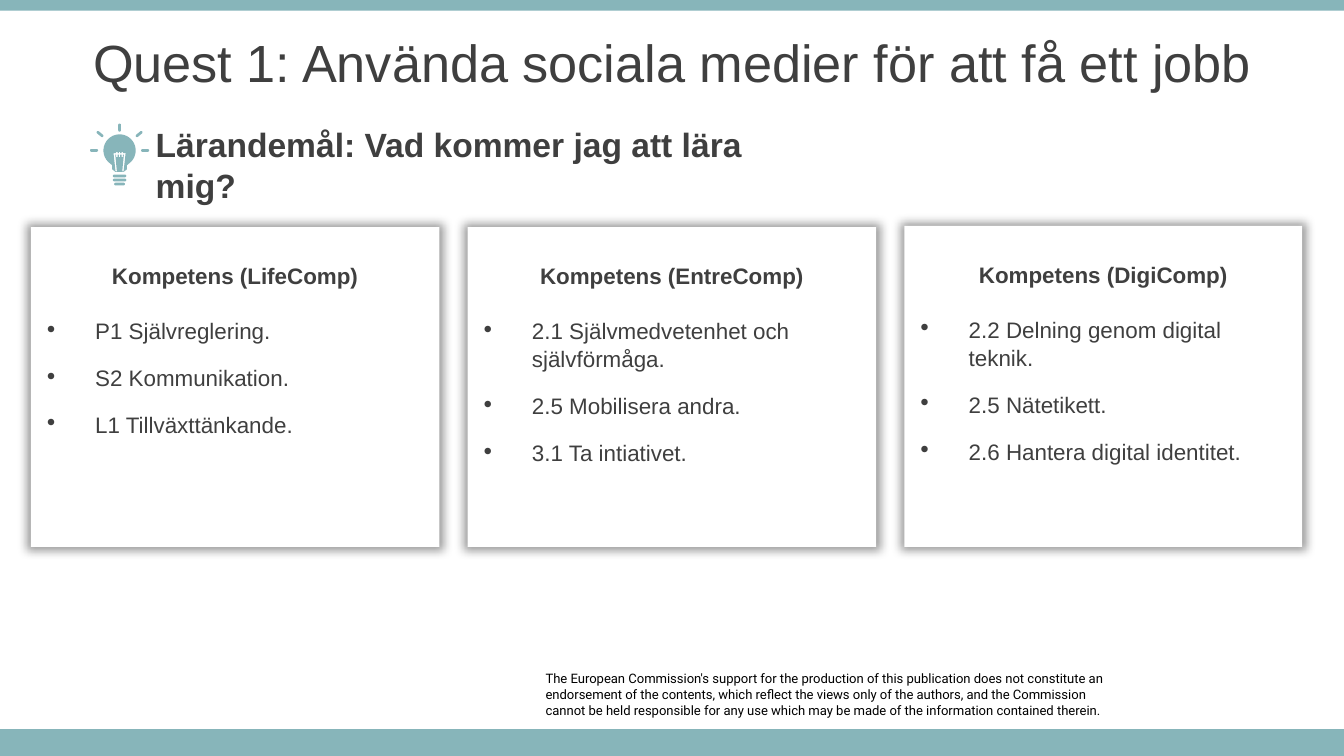
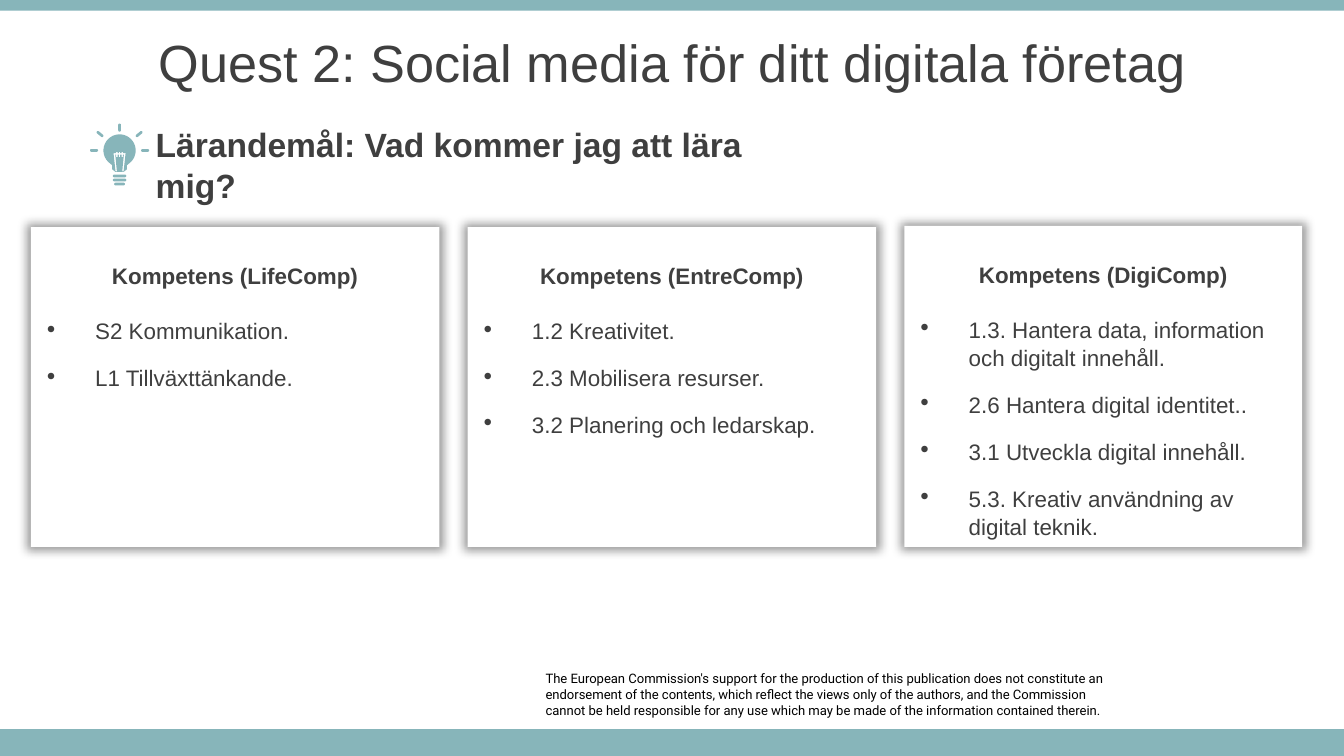
from math import cos, radians, sin

from lxml import etree
from pptx import Presentation
from pptx.dml.color import RGBColor
from pptx.enum.shapes import MSO_SHAPE
from pptx.enum.text import MSO_ANCHOR, MSO_AUTO_SIZE, PP_ALIGN
from pptx.oxml.ns import qn
from pptx.util import Inches, Pt

RECTANGLE = MSO_SHAPE.RECTANGLE
TOP, MIDDLE = MSO_ANCHOR.TOP, MSO_ANCHOR.MIDDLE
LEFT, CENTER = PP_ALIGN.LEFT, PP_ALIGN.CENTER
NO_AUTOFIT = MSO_AUTO_SIZE.NONE

COLOURS = {"band": "87B5BA", "text": "3F3F3F", "card": "FFFFFF", "footer": "000000"}
FONT, FOOTER_FONT = "Arial", "Roboto"
TITLE_ONLY = 5

# The page is a grid of square cells, 100 columns wide and 56.25 rows high.
COLUMNS, ROWS = 100, 56.25
CELL = Inches(10) / COLUMNS

CARD_LINE = 14.5
CARD_PLACES = [(2.3, 16.9, 30.4, 23.8), (34.8, 16.9, 30.4, 23.8), (67.3, 16.8, 29.6, 23.9)]
CARD_HEADINGS = ["Kompetens (LifeComp)", "Kompetens (EntreComp)", "Kompetens (DigiComp)"]
SUBTITLE = "Lärandemål: Vad kommer jag att lära mig?"
FOOTER = [
    "The European Commission's support for the production of this publication does not "
    "constitute an endorsement of the contents, which reflect the views only of the "
    "authors, and the Commission",
    "cannot be held responsible for any use which may be made of the information "
    "contained therein.",
]
QUESTS = [
    ("Quest 1: Använda sociala medier för att få ett jobb", [
        ["P1 Självreglering.", "S2 Kommunikation.", "L1 Tillväxttänkande."],
        ["2.1 Självmedvetenhet och självförmåga.", "2.5 Mobilisera andra.",
         "3.1 Ta intiativet."],
        ["2.2 Delning genom digital teknik.", "2.5 Nätetikett.",
         "2.6 Hantera digital identitet."],
    ]),
    ("Quest 2: Social media för ditt digitala företag", [
        ["S2 Kommunikation.", "L1 Tillväxttänkande."],
        ["1.2 Kreativitet.", "2.3 Mobilisera resurser.", "3.2 Planering och ledarskap."],
        ["1.3. Hantera data, information och digitalt innehåll.",
         "2.6 Hantera digital identitet..", "3.1 Utveckla digital innehåll.",
         "5.3. Kreativ användning av digital teknik."],
    ]),
]


def cells(*lengths):
    return [round(length * CELL) for length in lengths]


def arc(x, y, radius, start, end, step=10):
    return [(x + radius * cos(radians(angle)), y + radius * sin(radians(angle)))
            for angle in range(start, end + 1, step)]


def bar(x, y, angle, length, thickness=0.2):
    """Outline of a round-ended bar that starts at x, y."""
    radius = thickness / 2
    run = length - thickness
    dx, dy = cos(radians(angle)), sin(radians(angle))
    near = arc(x + radius * dx, y + radius * dy, radius, angle + 90, angle + 270, 30)
    far = arc(x + (radius + run) * dx, y + (radius + run) * dy, radius,
              angle - 90, angle + 90, 30)
    return near + far


def bulb_outlines(x, y):
    """Outlines of a lamp whose glass is centred on x, y."""
    glass = arc(x, y, 1.2, 135, 405)
    neck = [(x + 0.55, y + 1.1), (x + 0.55, y + 1.4), (x + 0.3, y + 1.6),
            (x - 0.3, y + 1.6), (x - 0.55, y + 1.4), (x - 0.55, y + 1.1)]
    # Filament: two legs, with three wire loops between them
    filament = [(x - 0.3, y + 1.55), (x - 0.45, y + 0.2)]
    for loop in (-0.2, 0, 0.2):
        filament += [(x + loop - 0.05, y + 0.2), (x + loop - 0.05, y + 0.1),
                     (x + loop + 0.05, y + 0.1), (x + loop + 0.05, y + 0.2)]
    filament += [(x + 0.45, y + 0.2), (x + 0.3, y + 1.55), (x + 0.2, y + 1.55),
                 (x + 0.32, y + 0.3)]
    for loop in (0.2, 0, -0.2):
        filament += [(x + loop + 0.05, y + 0.3), (x + loop + 0.05, y + 0.5),
                     (x + loop - 0.05, y + 0.5), (x + loop - 0.05, y + 0.3)]
    filament += [(x - 0.32, y + 0.3), (x - 0.2, y + 1.55)]
    # Screw base and rays
    base = [bar(x - width / 2, y + drop, 0, width)
            for width, drop in ((1, 1.9), (1, 2.2), (0.8, 2.5))]
    rays = [bar(x + reach * cos(radians(angle)), y + reach * sin(radians(angle)), angle, 0.6)
            for angle, reach in ((180, 1.6), (220, 1.6), (270, 1.4), (320, 1.6), (360, 1.6))]
    return [glass + neck, filament, *base, *rays]


class QuestDeck:
    """Holds the shared style and the page being drawn."""

    def __init__(self):
        self.deck = Presentation()
        self.deck.slide_width, self.deck.slide_height = cells(COLUMNS, ROWS)
        self.page = None

    def colour(self, name):
        return RGBColor.from_string(COLOURS[name])

    def new_page(self):
        self.page = self.deck.slides.add_slide(self.deck.slide_layouts[TITLE_ONLY])

    def style(self, para, size, bold=False, font=FONT, colour="text", align=LEFT):
        para.alignment = align
        for span in para.runs:
            span.font.name = font
            span.font.size = Pt(size)
            span.font.bold = bold
            span.font.color.rgb = self.colour(colour)

    def frame(self, box, anchor, insets=(1, 0.5, 1, 0.5)):
        frame = box.text_frame
        frame.word_wrap = True
        frame.auto_size = NO_AUTOFIT
        frame.vertical_anchor = anchor
        (frame.margin_left, frame.margin_top,
         frame.margin_right, frame.margin_bottom) = cells(*insets)
        return frame

    def paint(self, shape, colour):
        shape.shadow.inherit = False
        shape.fill.solid()
        shape.fill.fore_color.rgb = self.colour(colour)
        shape.line.fill.background()

    def rectangle(self, place, colour):
        shape = self.page.shapes.add_shape(RECTANGLE, *cells(*place))
        self.paint(shape, colour)
        return shape

    def title(self, text):
        box = self.page.shapes.title
        box.left, box.top, box.width, box.height = cells(0, 1.4, COLUMNS, 6.3)
        frame = self.frame(box, MIDDLE)
        frame.text = text
        self.style(frame.paragraphs[0], 28, align=CENTER)

    def text(self, place, lines, size, anchor=TOP, insets=(1, 0.5, 1, 0.5), **look):
        box = self.page.shapes.add_textbox(*cells(*place))
        frame = self.frame(box, anchor, insets)
        frame.text = "\n".join(lines)
        for para in frame.paragraphs:
            self.style(para, size, **look)

    def bulb(self, x, y):
        outlines = [[cells(*point) for point in outline] for outline in bulb_outlines(x, y)]
        builder = self.page.shapes.build_freeform(*outlines[0][0], scale=1.0)
        builder.add_line_segments(outlines[0][1:], close=True)
        for outline in outlines[1:]:
            builder.move_to(*outline[0])
            builder.add_line_segments(outline[1:], close=True)
        self.paint(builder.convert_to_shape(), "band")

    def soft_shadow(self, shape):
        effects = shape._element.spPr.find(qn("a:effectLst"))
        shadow = etree.SubElement(effects, qn("a:outerShdw"), blurRad=str(Pt(5)),
                                  sx="102000", sy="102000", algn="ctr", rotWithShape="0")
        black = etree.SubElement(shadow, qn("a:srgbClr"), val="000000")
        etree.SubElement(black, qn("a:alpha"), val="40000")

    def bullet(self, para):
        indent = Inches(0.38)
        properties = para._p.get_or_add_pPr()
        properties.set("marL", str(indent))
        properties.set("indent", str(-indent))
        tint = etree.SubElement(properties, qn("a:buClr"))
        etree.SubElement(tint, qn("a:srgbClr"), val=COLOURS["text"])
        etree.SubElement(properties, qn("a:buChar"), char="∙")

    def card(self, place, heading, items):
        shape = self.rectangle(place, "card")
        self.soft_shadow(shape)
        frame = self.frame(shape, TOP, (1, 2.5, 1, 0.5))
        frame.text = "\n".join([heading, *items])
        head, *rows = frame.paragraphs
        self.style(head, 12, bold=True, align=CENTER)
        head.space_after = Pt(CARD_LINE)
        for number, para in enumerate(rows):
            self.bullet(para)
            self.style(para, 12)
            para.space_before = Pt(10 if number else 0)
        for para in frame.paragraphs:
            para.line_spacing = 1.05

    def footer_and_bands(self):
        self.text((40.6, 49.9, 41.7, 3.5), FOOTER, 7, insets=(0, 0, 0, 0),
                  font=FOOTER_FONT, colour="footer")
        self.rectangle((0, 54.25, COLUMNS, 2), "band")
        self.rectangle((0, 0, COLUMNS, 0.8), "band")

    def save(self):
        self.deck.save("out.pptx")


def main():
    quest_deck = QuestDeck()
    for title, lists in QUESTS:
        quest_deck.new_page()
        quest_deck.footer_and_bands()
        quest_deck.title(title)
        quest_deck.bulb(8.9, 11.2)
        quest_deck.text((10.6, 10.7, 48.8, 3.1), [SUBTITLE], 18, MIDDLE, bold=True)
        for place, heading, items in zip(CARD_PLACES, CARD_HEADINGS, lists):
            quest_deck.card(place, heading, items)
    quest_deck.save()


if __name__ == "__main__":
    main()
